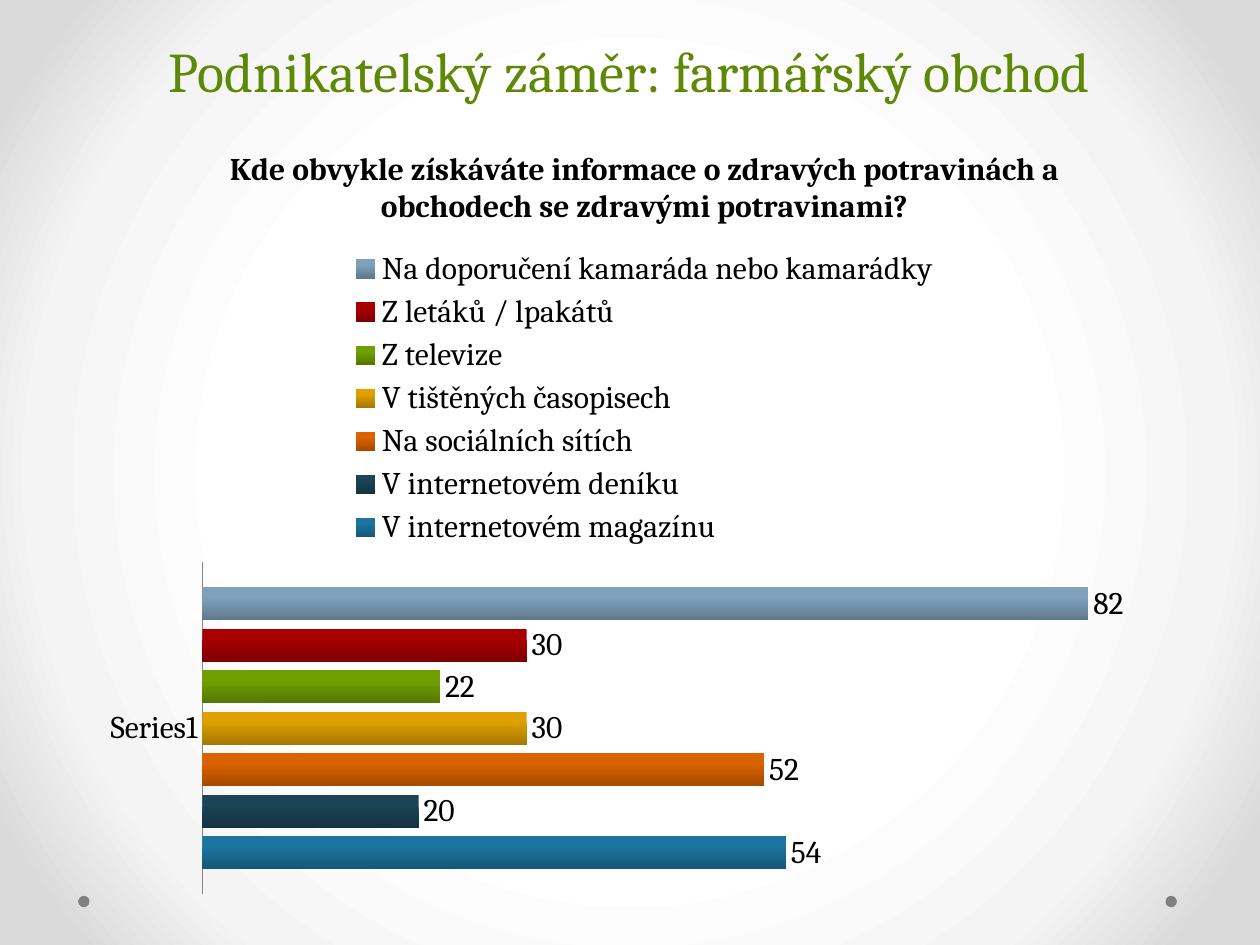
from dataclasses import dataclass

import pptx
import pptx.chart.data
import pptx.dml.color
import pptx.enum.chart
import pptx.enum.shapes
import pptx.enum.text
import pptx.oxml
import pptx.oxml.ns
import pptx.util

WIDTH, HEIGHT = 10, 7.5
FONT = "Cambria"
COLORS = {
    "title": "5E8805",
    "text": "000000",
    "axis": "868686",
    "dot": "808080",
}
BACKGROUND_STOPS = [(50, "FFFFFF"), (76, "F4F4F4"), (92, "DADADA")]
QUESTION = ("Kde obvykle získáváte informace o zdravých potravinách "
            "a obchodech se zdravými potravinami?")


@dataclass
class Source:
    name: str
    answers: int
    color: str


@dataclass
class Box:
    """Place and size as shares of the slide."""
    x: float
    y: float
    w: float
    h: float

    def emu(self) -> list[int]:
        return [pptx.util.Inches(v) for v in (
            self.x * WIDTH, self.y * HEIGHT, self.w * WIDTH, self.h * HEIGHT)]


SOURCES = [
    Source("V internetovém magazínu", 54, "1B75A0"),
    Source("V internetovém deníku", 20, "1B4456"),
    Source("Na sociálních sítích", 52, "DC6200"),
    Source("V tištěných časopisech", 30, "DFA000"),
    Source("Z televize", 22, "70A000"),
    Source("Z letáků / lpakátů", 30, "A80000"),
    Source("Na doporučení kamaráda nebo kamarádky", 82, "7FA1BC"),
]
DOTS = [Box(x, 0.948, 0.009, 0.012) for x in (0.062, 0.925)]


def rgb(value: str) -> pptx.dml.color.RGBColor:
    return pptx.dml.color.RGBColor.from_string(value)


def darker(value: str, share: float = 0.75) -> str:
    return "".join(f"{int(int(value[i:i + 2], 16) * share):02X}" for i in (0, 2, 4))


def style_font(font, size: float, color: str, bold: bool = False) -> None:
    font.name, font.size, font.bold = FONT, pptx.util.Pt(size), bold
    font.color.rgb = rgb(color)


def set_background(slide) -> None:
    """Radial gradient, light in the middle of the slide."""
    fill = slide.background.fill
    fill.gradient()
    stops = "".join(f'<a:gs pos="{pos * 1000}"><a:srgbClr val="{color}"/></a:gs>'
                    for pos, color in BACKGROUND_STOPS)
    radial = pptx.oxml.parse_xml(
        f'<a:gradFill {pptx.oxml.ns.nsdecls("a")} rotWithShape="1">'
        f'<a:gsLst>{stops}</a:gsLst><a:path path="circle">'
        '<a:fillToRect l="50000" t="50000" r="50000" b="50000"/></a:path></a:gradFill>')
    linear = slide.background._cSld.find(".//" + pptx.oxml.ns.qn("a:gradFill"))
    linear.getparent().replace(linear, radial)


def add_dot(slide, box: Box) -> None:
    sp = slide.shapes.add_shape(pptx.enum.shapes.MSO_SHAPE.OVAL, *box.emu())
    sp.shadow.inherit = False
    sp.fill.solid()
    sp.fill.fore_color.rgb = rgb(COLORS["dot"])
    sp.line.fill.background()


def add_title(slide, text: str, box: Box) -> None:
    tf = slide.shapes.add_textbox(*box.emu()).text_frame
    tf.word_wrap = True
    tf.vertical_anchor = pptx.enum.text.MSO_ANCHOR.BOTTOM
    p = tf.paragraphs[0]
    p.alignment = pptx.enum.text.PP_ALIGN.CENTER
    p.line_spacing = pptx.util.Pt(58)
    r = p.add_run()
    r.text = text
    style_font(r.font, 32, COLORS["title"])


def set_plot_area(chart, x: float, y: float, w: float, h: float) -> None:
    """Fix the inner plot area, in shares of the chart."""
    plot_area = chart._chartSpace.chart.plotArea
    for old in plot_area.findall(pptx.oxml.ns.qn("c:layout")):
        plot_area.remove(old)
    sizes = "".join(f'<c:{tag} val="{value}"/>'
                    for tag, value in zip("xywh", (x, y, w, h)))
    plot_area.insert(0, pptx.oxml.parse_xml(
        f'<c:layout {pptx.oxml.ns.nsdecls("c")}><c:manualLayout>'
        '<c:layoutTarget val="inner"/><c:xMode val="edge"/><c:yMode val="edge"/>'
        f'{sizes}</c:manualLayout></c:layout>'))


def style_series(series, color: str) -> None:
    fill = series.format.fill
    fill.gradient()
    fill.gradient_angle = 270
    for stop, shade, position in zip(fill.gradient_stops,
                                     (color, darker(color)), (0.3, 1)):
        stop.color.rgb = rgb(shade)
        stop.position = position
    labels = series.data_labels
    labels.show_value = True
    labels.position = pptx.enum.chart.XL_LABEL_POSITION.OUTSIDE_END
    style_font(labels.font, 18, COLORS["text"])


def add_sources_chart(slide, box: Box) -> None:
    data = pptx.chart.data.CategoryChartData()
    data.categories = ["Series1"]
    for source in SOURCES:
        data.add_series(source.name, [source.answers])
    chart = slide.shapes.add_chart(
        pptx.enum.chart.XL_CHART_TYPE.BAR_CLUSTERED, *box.emu(), data).chart
    style_font(chart.font, 18, COLORS["text"])

    chart.has_title = True
    r = chart.chart_title.text_frame.paragraphs[0].add_run()
    r.text = QUESTION
    style_font(r.font, 18, COLORS["text"], bold=True)
    chart.chart_title.include_in_layout = False

    chart.has_legend = True
    chart.legend.position = pptx.enum.chart.XL_LEGEND_POSITION.TOP
    chart.legend.include_in_layout = False
    style_font(chart.legend.font, 18, COLORS["text"])

    axis = chart.category_axis
    axis.major_tick_mark = pptx.enum.chart.XL_TICK_MARK.NONE
    axis.format.line.color.rgb = rgb(COLORS["axis"])
    values = chart.value_axis
    values.visible = False
    values.has_major_gridlines = False
    values.minimum_scale, values.maximum_scale = 0, 90

    plot = chart.plots[0]
    plot.gap_width, plot.overlap, plot.vary_by_categories = 150, -25, False
    for series, source in zip(plot.series, SOURCES):
        style_series(series, source.color)
    set_plot_area(chart, 0.1, 0.56, 0.88, 0.42)


def main() -> None:
    prs = pptx.Presentation()
    prs.slide_width = pptx.util.Inches(WIDTH)
    prs.slide_height = pptx.util.Inches(HEIGHT)
    slide = prs.slides.add_slide(prs.slide_layouts[6])
    set_background(slide)
    for dot in DOTS:
        add_dot(slide, dot)
    add_title(slide, "Podnikatelský záměr: farmářský obchod",
              Box(0.05, -0.117, 0.9, 0.233))
    add_sources_chart(slide, Box(0.073, 0.127, 0.877, 0.836))
    prs.save("out.pptx")


if __name__ == "__main__":
    main()
